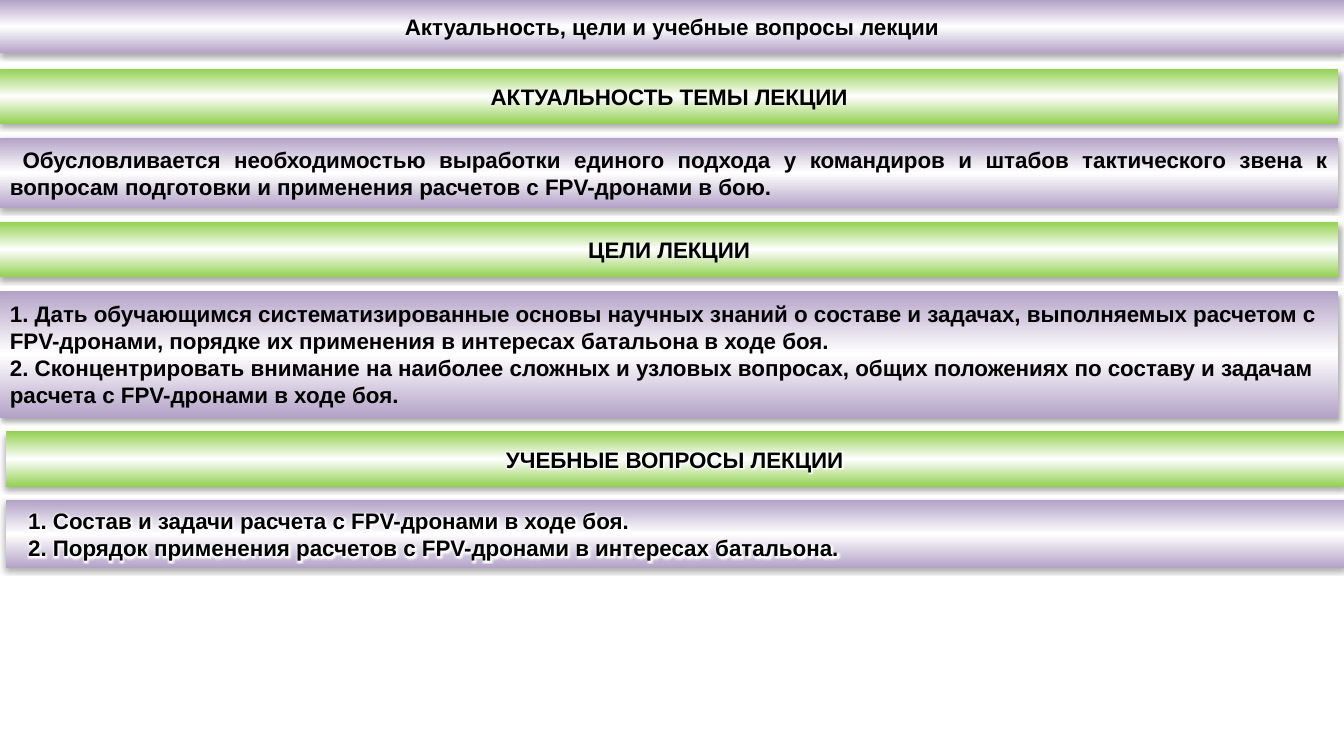
from lxml.etree import SubElement
from pptx import Presentation
from pptx.dml.color import RGBColor
from pptx.enum.shapes import MSO_SHAPE as Shape
from pptx.enum.text import MSO_ANCHOR as Anchor, PP_ALIGN as Align
from pptx.oxml.ns import qn
from pptx.util import Pt

SLIDE_WIDTH, SLIDE_HEIGHT = 960, 540
BAR_WIDTH = 956
HEADING_HEIGHT = 39.6
GAP = 9.8
INDENT = 9
PURPLE, GREEN, WHITE, BLACK = "B3A2C7", "92D050", "FFFFFF", "000000"

SECTIONS = [
    dict(left=0, height=50.2, heading="АКТУАЛЬНОСТЬ ТЕМЫ ЛЕКЦИИ",
         align=Align.JUSTIFY, indent=INDENT, glow=False,
         lines=["Обусловливается необходимостью выработки единого подхода у командиров "
                "и штабов тактического звена к вопросам подготовки и применения "
                "расчетов с FPV-дронами в бою."]),
    dict(left=0, height=90.5, heading="ЦЕЛИ ЛЕКЦИИ",
         align=Align.LEFT, indent=0, glow=False,
         lines=["1. Дать обучающимся систематизированные основы научных знаний о составе "
                "и задачах, выполняемых расчетом с FPV-дронами, порядке их применения "
                "в интересах батальона в ходе боя.",
                "2. Сконцентрировать внимание на наиболее сложных и узловых вопросах, "
                "общих положениях по составу и задачам расчета с FPV-дронами в ходе боя."]),
    dict(left=SLIDE_WIDTH - BAR_WIDTH, height=48.2, heading="УЧЕБНЫЕ ВОПРОСЫ ЛЕКЦИИ",
         align=Align.LEFT, indent=INDENT, glow=True,
         lines=["1. Состав и задачи расчета с FPV-дронами в ходе боя.",
                "2. Порядок применения расчетов с FPV-дронами в интересах батальона."]),
]


def color(hex_value):
    """Turn a hex string into a colour."""
    return RGBColor.from_string(hex_value)


def add_color(parent, hex_value, alpha=100):
    """Add a colour element with an opacity in percent."""
    element = SubElement(parent, qn("a:srgbClr"), val=hex_value)
    if alpha < 100:
        SubElement(element, qn("a:alpha"), val=str(alpha * 1000))


def add_gradient(properties, edge):
    """Fill with a vertical gradient from the edge colour to white and back."""
    gradient = SubElement(properties, qn("a:gradFill"), rotWithShape="1")
    stops = SubElement(gradient, qn("a:gsLst"))
    for position, hex_value in ((0, edge), (50, WHITE), (100, edge)):
        add_color(SubElement(stops, qn("a:gs"), pos=str(position * 1000)), hex_value)
    SubElement(gradient, qn("a:lin"), ang="5400000", scaled="0")


def add_shadow(properties):
    """Add a soft shadow falling straight down."""
    effects = SubElement(properties, qn("a:effectLst"))
    shadow = SubElement(effects, qn("a:outerShdw"), blurRad=str(Pt(3.5)),
                        dist=str(Pt(2.2)), dir="5400000", rotWithShape="0")
    add_color(shadow, BLACK, 32)


def add_glow(run):
    """Surround the letters of a run with a white glow."""
    effects = SubElement(run._r.get_or_add_rPr(), qn("a:effectLst"))
    add_color(SubElement(effects, qn("a:glow"), rad=str(Pt(5))), WHITE)


def add_bar(slide, box, edge, lines, align=Align.CENTER, indent=0, glow=False):
    """Draw a gradient bar with bold text in the given box."""
    shape = slide.shapes.add_shape(Shape.RECTANGLE, *map(Pt, box))
    properties = shape._element.spPr
    add_gradient(properties, edge)
    shape.line.fill.background()
    add_shadow(properties)
    frame = shape.text_frame
    frame.word_wrap = True
    frame.vertical_anchor = Anchor.MIDDLE
    for index, line in enumerate(lines):
        paragraph = frame.add_paragraph() if index else frame.paragraphs[0]
        run = paragraph.add_run()
        run.text = line
        if glow:
            add_glow(run)
        paragraph.alignment = align
        if indent:
            layout = paragraph._p.get_or_add_pPr()
            layout.set("marL", "0")
            layout.set("indent", str(Pt(indent)))
        font = paragraph.font
        font.name, font.size, font.bold = "Arial", Pt(16), True
        font.color.rgb = color(BLACK)


def add_section(slide, left, top, width, section):
    """Draw a green heading over a purple body and return the next free top."""
    glow = section["glow"]
    add_bar(slide, (left, top, width, HEADING_HEIGHT), GREEN, [section["heading"]], glow=glow)
    body_top = top + HEADING_HEIGHT + GAP
    add_bar(slide, (left, body_top, width, section["height"]), PURPLE, section["lines"],
            section["align"], section["indent"], glow)
    return body_top + section["height"] + GAP


def main():
    """Build the lecture overview slide."""
    presentation = Presentation()
    presentation.slide_width, presentation.slide_height = Pt(SLIDE_WIDTH), Pt(SLIDE_HEIGHT)
    slide = presentation.slides.add_slide(presentation.slide_layouts[6])
    add_bar(slide, (0, 0, SLIDE_WIDTH, 38.2), PURPLE,
            ["Актуальность, цели и учебные вопросы лекции"])
    top = 49
    for section in SECTIONS:
        top = add_section(slide, section["left"], top, BAR_WIDTH, section)
    presentation.save("out.pptx")


if __name__ == "__main__":
    main()
